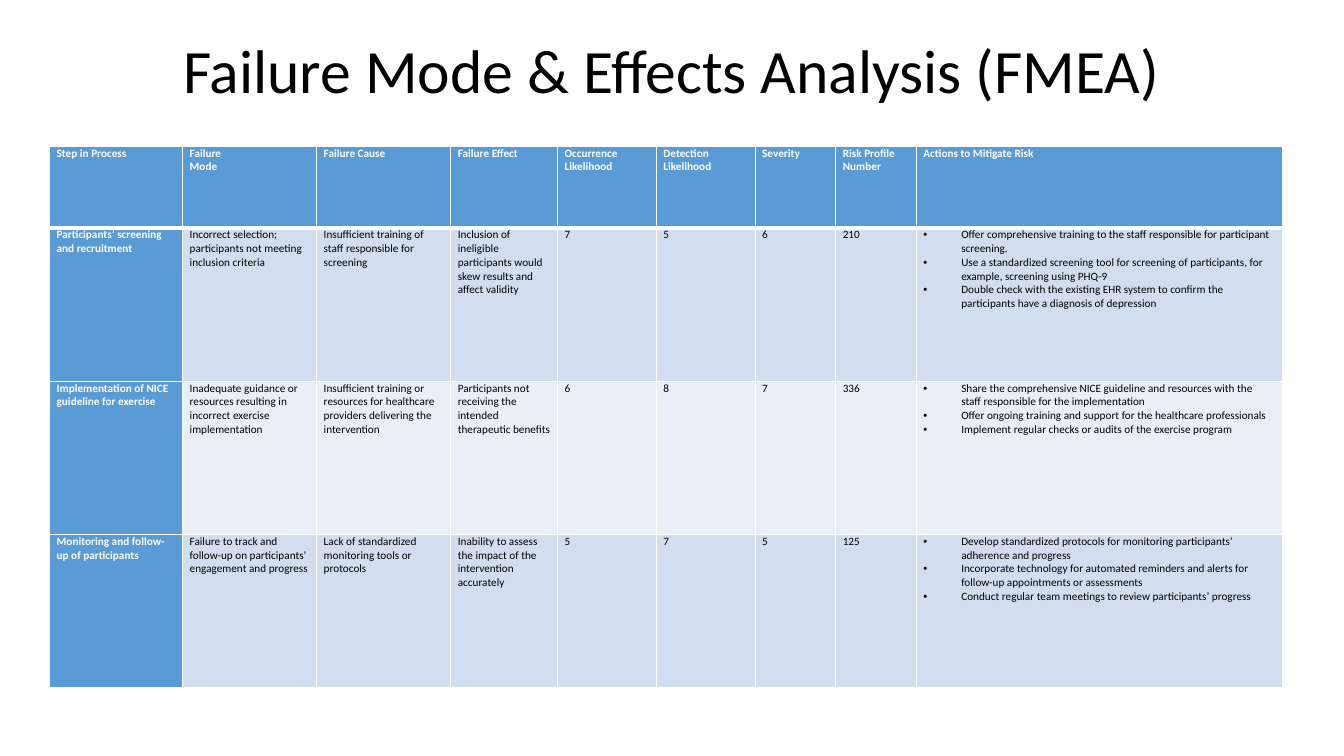
import pptx
import pptx.dml.color
import pptx.enum.text
import pptx.oxml
import pptx.oxml.ns
import pptx.util

TITLE = "Failure Mode & Effects Analysis (FMEA)"
HEADER = [
    ["Step in Process"], ["Failure", "Mode"], ["Failure Cause"], ["Failure Effect"],
    ["Occurrence Likelihood"], ["Detection", "Likelihood"], ["Severity"],
    ["Risk Profile Number"], ["Actions to Mitigate Risk"],
]
STEPS = [
    ("Participants’ screening and recruitment",
     "Incorrect selection; participants not meeting inclusion criteria",
     "Insufficient training of staff responsible for screening",
     "Inclusion of ineligible participants would skew results and affect validity",
     7, 5, 6,
     ["Offer comprehensive training to the staff responsible for participant screening.",
      "Use a standardized screening tool for screening of participants, for example, screening using PHQ-9",
      "Double check with the existing EHR system to confirm the participants have a diagnosis of depression"]),
    ("Implementation of NICE guideline for exercise",
     "Inadequate guidance or resources resulting in incorrect exercise implementation",
     "Insufficient training or resources for healthcare providers delivering the intervention",
     "Participants not receiving the intended therapeutic benefits",
     6, 8, 7,
     ["Share the comprehensive NICE guideline and resources with the staff responsible for the implementation",
      "Offer ongoing training and support for the healthcare professionals",
      "Implement regular checks or audits of the exercise program"]),
    ("Monitoring and follow-up of participants",
     "Failure to track and follow-up on participants’  engagement and progress",
     "Lack of standardized monitoring tools or protocols",
     "Inability to assess the impact of the intervention accurately",
     5, 7, 5,
     ["Develop standardized protocols for monitoring participants’ adherence and progress",
      "Incorporate technology for automated reminders and alerts for follow-up appointments or assessments",
      "Conduct regular team meetings to review participants’ progress"]),
]
COLS = [95.04, 95.76, 95.76, 76.32, 70.56, 70.56, 57.6, 57.6, 261.36]
HEADER_H, STEP_H = 58.3, 109.5
LEFT, TOP = 35.5, 104.6
FONT = "Calibri"
BLUE, BANDS = "5B9BD5", ["D2DEEF", "EAEFF7"]
WHITE, BLACK = "FFFFFF", "000000"

Pt = pptx.util.Pt


def rgb(value):
    return pptx.dml.color.RGBColor.from_string(value)


def add_run(p, text, size, color, bold=False):
    r = p.add_run()
    r.text = text
    r.font.name = FONT
    r.font.size = Pt(size)
    r.font.bold = bold
    r.font.color.rgb = rgb(color)


def add_bullet(p):
    pPr = p._p.get_or_add_pPr()
    pPr.set("marL", str(Pt(27)))
    pPr.set("indent", str(Pt(-27)))
    ns = pptx.oxml.ns.nsdecls("a")
    pPr.append(pptx.oxml.parse_xml(f'<a:buFont {ns} typeface="Arial"/>'))
    pPr.append(pptx.oxml.parse_xml(f'<a:buChar {ns} char="•"/>'))


def set_borders(cell, widths):
    tcPr = cell._tc.get_or_add_tcPr()
    ns = pptx.oxml.ns.nsdecls("a")
    for i, (side, width) in enumerate(widths.items()):
        tcPr.insert(i, pptx.oxml.parse_xml(
            f'<a:ln{side} {ns} w="{Pt(width)}"><a:solidFill>'
            f'<a:srgbClr val="{WHITE}"/></a:solidFill></a:ln{side}>'))


def fill_cell(cell, lines, fill, color, bold, bulleted, widths):
    cell.margin_left = cell.margin_right = Pt(5)
    cell.margin_top = cell.margin_bottom = Pt(0)
    cell.fill.solid()
    cell.fill.fore_color.rgb = rgb(fill)
    set_borders(cell, widths)
    tf = cell.text_frame
    for i, line in enumerate(lines):
        p = tf.paragraphs[0] if i == 0 else tf.add_paragraph()
        if bulleted:
            add_bullet(p)
        add_run(p, line, 8, color, bold)


def add_title(slide):
    sp = slide.shapes.add_textbox(Pt(66), Pt(0), Pt(828), Pt(104.4))
    tf = sp.text_frame
    tf.word_wrap = True
    tf.vertical_anchor = pptx.enum.text.MSO_ANCHOR.MIDDLE
    p = tf.paragraphs[0]
    p.alignment = pptx.enum.text.PP_ALIGN.CENTER
    p.line_spacing = 0.9
    add_run(p, TITLE, 44, BLACK)


def add_fmea_table(slide):
    rows = [HEADER]
    for step, mode, cause, effect, occurrence, detection, severity, actions in STEPS:
        scores = [occurrence, detection, severity]
        risk = 125 if scores == [5, 7, 5] else occurrence * detection * severity
        rows.append([[step], [mode], [cause], [effect],
                     *[[str(n)] for n in scores + [risk]], actions])
    heights = [HEADER_H] + [STEP_H] * len(STEPS)
    table = slide.shapes.add_table(len(rows), len(COLS), Pt(LEFT), Pt(TOP),
                                   Pt(sum(COLS)), Pt(sum(heights))).table
    table.horz_banding = False
    table.first_col = True
    for column, width in zip(table.columns, COLS):
        column.width = Pt(width)
    for i, (row, height) in enumerate(zip(rows, heights)):
        table.rows[i].height = Pt(height)
        widths = {"L": 1, "R": 1, "T": 3 if i == 1 else 1, "B": 3 if i == 0 else 1}
        for j, lines in enumerate(row):
            head = i == 0 or j == 0
            fill_cell(table.cell(i, j), lines, BLUE if head else BANDS[(i - 1) % 2],
                      WHITE if head else BLACK, head,
                      i > 0 and j == len(COLS) - 1, widths)


def main():
    prs = pptx.Presentation()
    prs.slide_width, prs.slide_height = Pt(960), Pt(540)
    slide = prs.slides.add_slide(prs.slide_layouts[6])
    add_title(slide)
    add_fmea_table(slide)
    prs.save("out.pptx")


if __name__ == "__main__":
    main()
